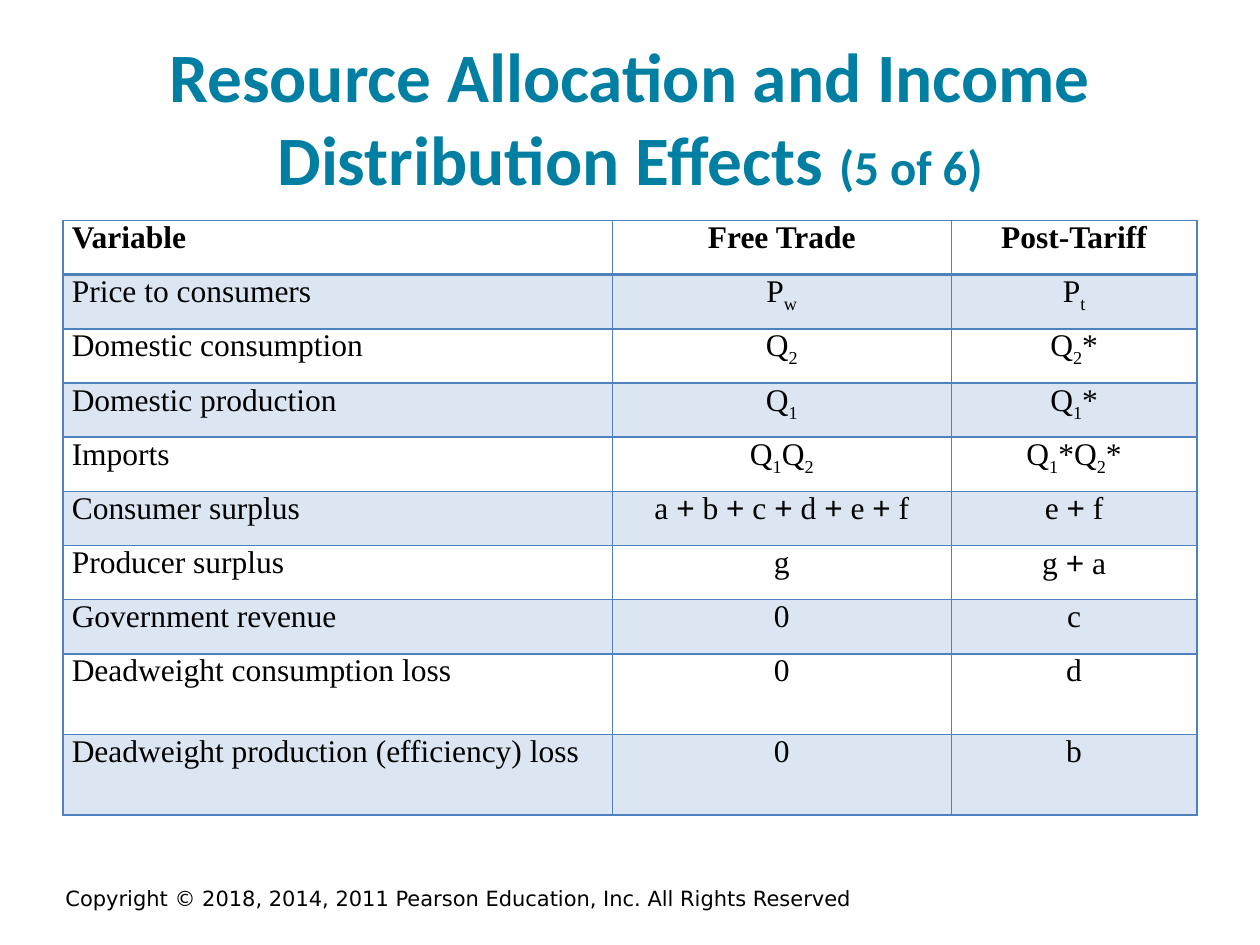
from lxml import etree
from pptx import Presentation
from pptx.dml.color import RGBColor
from pptx.enum.text import MSO_ANCHOR, PP_ALIGN
from pptx.oxml.ns import qn
from pptx.util import Inches, Pt

LEFT, CENTER = PP_ALIGN.LEFT, PP_ALIGN.CENTER
MIDDLE = MSO_ANCHOR.MIDDLE
BLANK = 6

TEAL, BLUE, TINT, BLACK = "007FA3", "4F81BD", "DCE6F2", "000000"

COLS = [4.36, 2.69, 1.95]
HEIGHTS = [0.43] * 8 + [0.64] * 2
# An underscore lowers the character after it.
ROWS = [
    ("Variable", "Free Trade", "Post-Tariff"),
    ("Price to consumers", "P_w", "P_t"),
    ("Domestic consumption", "Q_2", "Q_2*"),
    ("Domestic production", "Q_1", "Q_1*"),
    ("Imports", "Q_1Q_2", "Q_1*Q_2*"),
    ("Consumer surplus", "a + b + c + d + e + f", "e + f"),
    ("Producer surplus", "g", "g + a"),
    ("Government revenue", "0", "c"),
    ("Deadweight consumption loss", "0", "d"),
    ("Deadweight production (efficiency) loss", "0", "b"),
]


def color(code):
    return RGBColor.from_string(code)


def add_run(para, text, code, **form):
    run = para.add_run()
    run.text = text
    for key, value in form.items():
        setattr(run.font, key, value)
    run.font.color.rgb = color(code)
    return run


def add_box(slide, box):
    """Add a wrapped, middle-anchored text box and return its paragraph."""
    frame = slide.shapes.add_textbox(*map(Inches, box)).text_frame
    frame.word_wrap = True
    frame.vertical_anchor = MIDDLE
    para = frame.paragraphs[0]
    para.alignment = CENTER
    return para


def add_title(slide, box):
    para = add_box(slide, box)
    form = {"name": "Calibri", "bold": True}
    add_run(para, "Resource Allocation and Income Distribution Effects ",
            TEAL, size=Pt(39.6), **form)
    add_run(para, "(5 of 6)", TEAL, size=Pt(27.9), **form)


def add_footer(slide, box):
    add_run(add_box(slide, box),
            "Copyright © 2018, 2014, 2011 Pearson Education, Inc. "
            "All Rights Reserved",
            BLACK, name="DejaVu Sans", size=Pt(12))


def split_marks(text):
    """Yield (text, is_sub) pieces, with each plus sign on its own."""
    for i, part in enumerate(text.split("_")):
        if i:
            yield part[0], True
            part = part[1:]
        for j, piece in enumerate(part.split("+")):
            if j:
                yield "+", False
            if piece:
                yield piece, False


def set_edges(cell, widths):
    props = cell._tc.get_or_add_tcPr()
    for side, width in widths.items():
        line = etree.SubElement(props, qn("a:ln" + side), w=str(Pt(width)))
        fill = etree.SubElement(line, qn("a:solidFill"))
        etree.SubElement(fill, qn("a:srgbClr"), val=BLUE)


def fill_cell(cell, text, row, col):
    form = {"margin_left": Inches(0.07), "margin_right": Inches(0.07),
            "margin_top": 0, "margin_bottom": 0}
    for key, value in form.items():
        setattr(cell, key, value)
    set_edges(cell, {"L": 1, "R": 1, "T": 2 if row == 1 else 1,
                     "B": 2 if row == 0 else 1})
    if row % 2:
        cell.fill.solid()
        cell.fill.fore_color.rgb = color(TINT)
    else:
        cell.fill.background()
    para = cell.text_frame.paragraphs[0]
    para.alignment = CENTER if col else LEFT
    for piece, sub in split_marks(text):
        run = add_run(para, piece, BLACK, size=Pt(18), bold=row == 0,
                      name="Arial" if piece == "+" else "Times New Roman")
        if sub:
            run._r.get_or_add_rPr().set("baseline", "-25000")


def add_grid(slide, left, top):
    size = (left, top, sum(COLS), sum(HEIGHTS))
    table = slide.shapes.add_table(
        len(ROWS), len(COLS), *map(Inches, size)).table
    table.horz_banding = False
    table.first_row = True
    for col, width in zip(table.columns, COLS):
        col.width = Inches(width)
    for row, height in zip(table.rows, HEIGHTS):
        row.height = Inches(height)
    for r, texts in enumerate(ROWS):
        for c, text in enumerate(texts):
            fill_cell(table.cell(r, c), text, r, c)


def main():
    deck = Presentation()
    deck.slide_width, deck.slide_height = Inches(10), Inches(7.5)
    slide = deck.slides.add_slide(deck.slide_layouts[BLANK])
    add_footer(slide, (-0.15, 6.95, 7.58, 0.36))
    add_title(slide, (0.5, 0.3, 9, 1.25))
    add_grid(slide, 0.5, 1.75)
    deck.save("out.pptx")


if __name__ == "__main__":
    main()
